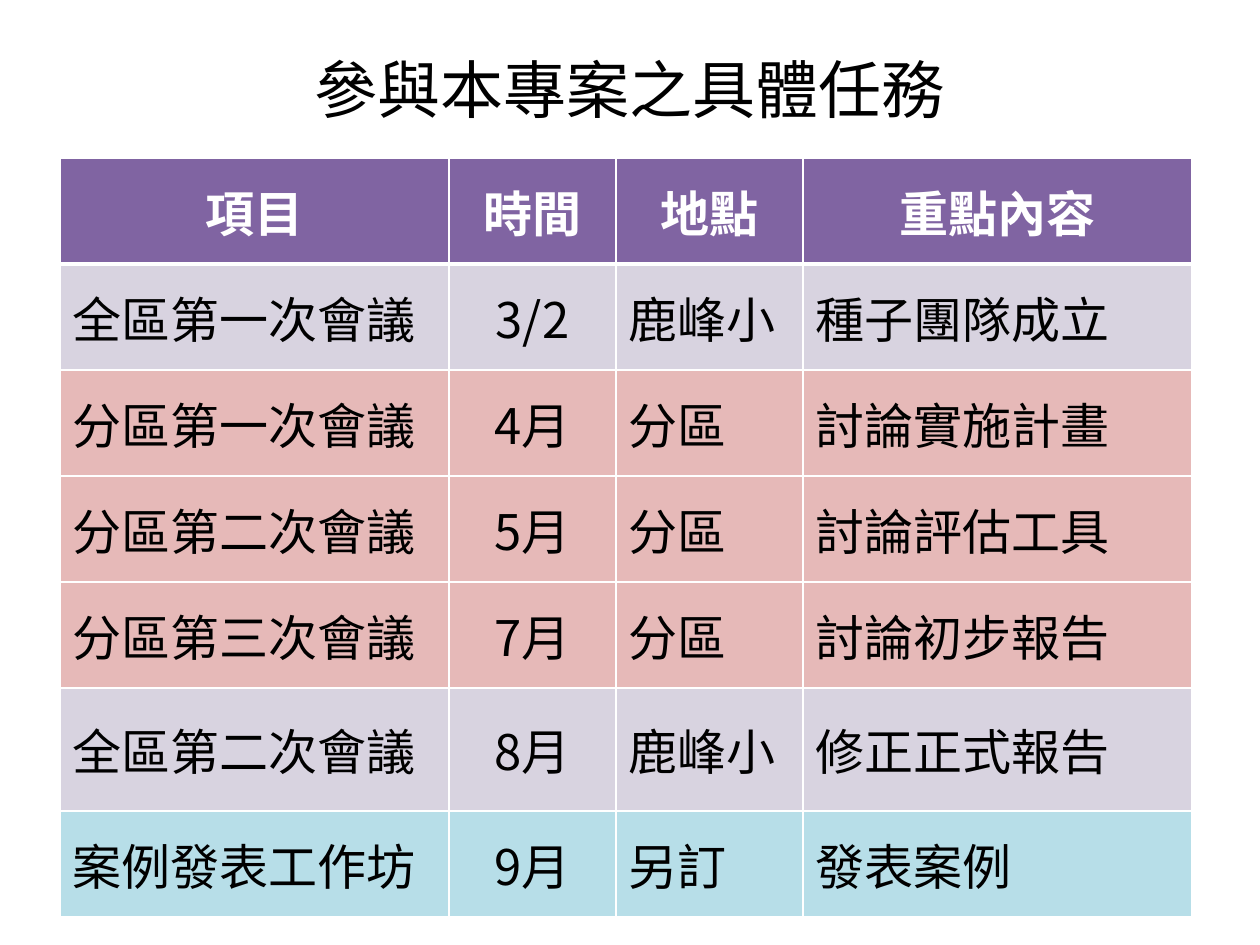
from lxml import etree
from pptx import Presentation
from pptx.dml.color import RGBColor
from pptx.enum.text import MSO_ANCHOR, PP_ALIGN
from pptx.oxml.ns import qn
from pptx.util import Emu, Pt

LEFT, CENTER = PP_ALIGN.LEFT, PP_ALIGN.CENTER
MIDDLE = MSO_ANCHOR.MIDDLE

TITLE = "參與本專案之具體任務"
HEADERS = ("項目", "時間", "地點", "重點內容")
TASKS = [
    ("全區", ("全區第一次會議", "3/2", "鹿峰小", "種子團隊成立")),
    ("分區", ("分區第一次會議", "4月", "分區", "討論實施計畫")),
    ("分區", ("分區第二次會議", "5月", "分區", "討論評估工具")),
    ("分區", ("分區第三次會議", "7月", "分區", "討論初步報告")),
    ("全區", ("全區第二次會議", "8月", "鹿峰小", "修正正式報告")),
    ("發表", ("案例發表工作坊", "9月", "另訂", "發表案例")),
]
TASK_FILLS = {"全區": "D8D3E0", "分區": "E6B9B8", "發表": "B7DEE8"}
HEADER_FILL, WHITE, BLACK = "8064A2", "FFFFFF", "000000"
TITLE_FONT, TABLE_FONT = "Calibri", "Noto Sans CJK SC"

SLIDE_SIZE = (1260, 945)
TITLE_BOX = (63, 29, 1134, 118)
TABLE_LEFT, TABLE_TOP = 60, 158
COLUMN_WIDTHS = (389, 167, 187, 389)
ROW_HEIGHTS = (106, 106, 106, 106, 106, 123, 106)
TIME_COLUMN = 1


def px(length):
    return Emu(length * 914400 // 126)


def color(hex_value):
    return RGBColor.from_string(hex_value)


def write(text_frame, text, size, font, hex_value, alignment, bold=False):
    paragraph = text_frame.paragraphs[0]
    paragraph.alignment = alignment
    run = paragraph.add_run()
    run.text = text
    run.font.size = Pt(size)
    run.font.name = font
    run.font.bold = bold
    run.font.color.rgb = color(hex_value)
    return run


def set_borders(cell, bottom_width):
    properties = cell._tc.get_or_add_tcPr()
    for side, width in (("L", 1), ("R", 1), ("T", 1), ("B", bottom_width)):
        line = etree.SubElement(properties, qn(f"a:ln{side}"), w=str(Pt(width)))
        fill = etree.SubElement(line, qn("a:solidFill"))
        etree.SubElement(fill, qn("a:srgbClr"), val=WHITE)


def fill_cell(cell, text, fill, text_color, alignment, is_header):
    set_borders(cell, 3 if is_header else 1)
    cell.fill.solid()
    cell.fill.fore_color.rgb = color(fill)
    cell.vertical_anchor = MIDDLE
    run = write(cell.text_frame, text, 28, TABLE_FONT, text_color, alignment, is_header)
    etree.SubElement(run.font._element, qn("a:ea"), typeface=TABLE_FONT)


def add_title(slide):
    text_frame = slide.shapes.add_textbox(*map(px, TITLE_BOX)).text_frame
    text_frame.word_wrap = True
    text_frame.vertical_anchor = MIDDLE
    write(text_frame, TITLE, 36, TITLE_FONT, BLACK, CENTER)


def add_task_table(slide):
    table = slide.shapes.add_table(
        len(ROW_HEIGHTS), len(COLUMN_WIDTHS), px(TABLE_LEFT), px(TABLE_TOP),
        px(sum(COLUMN_WIDTHS)), px(sum(ROW_HEIGHTS)),
    ).table
    for column, width in zip(table.columns, COLUMN_WIDTHS):
        column.width = px(width)
    for row, height in zip(table.rows, ROW_HEIGHTS):
        row.height = px(height)

    for index, text in enumerate(HEADERS):
        fill_cell(table.cell(0, index), text, HEADER_FILL, WHITE, CENTER, True)
    for row_index, (kind, texts) in enumerate(TASKS, start=1):
        for index, text in enumerate(texts):
            alignment = CENTER if index == TIME_COLUMN else LEFT
            fill_cell(table.cell(row_index, index), text, TASK_FILLS[kind],
                      BLACK, alignment, False)


def main():
    presentation = Presentation()
    presentation.slide_width, presentation.slide_height = map(px, SLIDE_SIZE)
    slide = presentation.slides.add_slide(presentation.slide_layouts[6])
    add_title(slide)
    add_task_table(slide)
    presentation.save("out.pptx")


if __name__ == "__main__":
    main()
